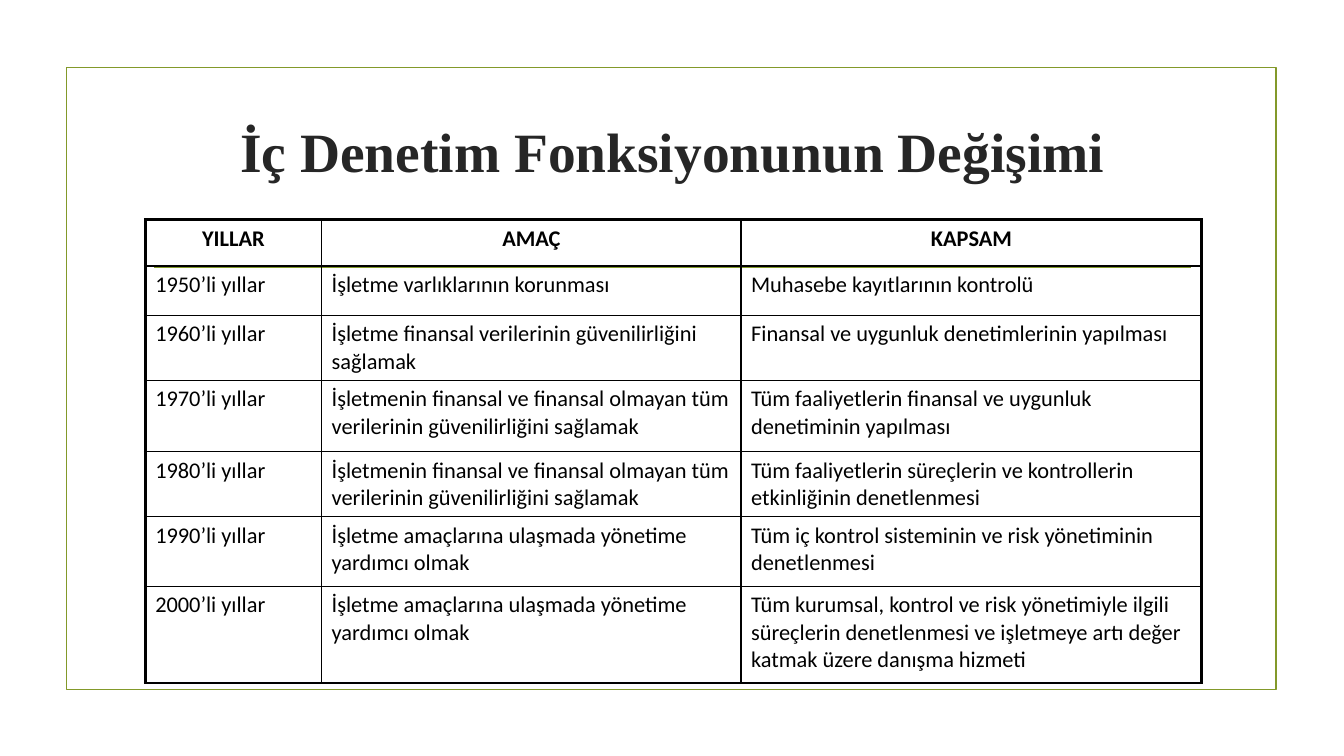
"""Build a slide with a table on how the internal audit function changed."""
import pptx
import pptx.dml.color
import pptx.enum.shapes
import pptx.enum.text
import pptx.oxml
import pptx.oxml.ns
import pptx.util
from pptx.util import Inches

TITLE = "İç Denetim Fonksiyonunun Değişimi"
ROWS = [
    ("YILLAR", "AMAÇ", "KAPSAM"),
    ("1950’li yıllar", "İşletme varlıklarının korunması",
     "Muhasebe kayıtlarının kontrolü"),
    ("1960’li yıllar", "İşletme finansal verilerinin güvenilirliğini sağlamak",
     "Finansal ve uygunluk denetimlerinin yapılması"),
    ("1970’li yıllar",
     "İşletmenin finansal ve finansal olmayan tüm verilerinin güvenilirliğini sağlamak",
     "Tüm faaliyetlerin finansal ve uygunluk denetiminin yapılması"),
    ("1980’li yıllar",
     "İşletmenin finansal ve finansal olmayan tüm verilerinin güvenilirliğini sağlamak",
     "Tüm faaliyetlerin süreçlerin ve kontrollerin etkinliğinin denetlenmesi"),
    ("1990’li yıllar", "İşletme amaçlarına ulaşmada yönetime yardımcı olmak",
     "Tüm iç kontrol sisteminin ve risk yönetiminin denetlenmesi"),
    ("2000’li yıllar", "İşletme amaçlarına ulaşmada yönetime yardımcı olmak",
     "Tüm kurumsal, kontrol ve risk yönetimiyle ilgili süreçlerin denetlenmesi "
     "ve işletmeye artı değer katmak üzere danışma hizmeti"),
]
COLUMN_WIDTHS = [1.75, 4.16, 4.57]
ROW_HEIGHTS = [0.46, 0.49, 0.63, 0.71, 0.55, 0.69, 0.96]
COLORS = {"accent": "83992A", "title": "262626", "table": "000000"}
OUTER_BORDER, INNER_BORDER = 2.25, 1


def rgb(name):
    return pptx.dml.color.RGBColor.from_string(COLORS[name])


def style_line(shape):
    shape.line.color.rgb = rgb("accent")
    shape.line.width = pptx.util.Pt(1.25)


def add_text(paragraph, text, size, font_name, color, bold):
    run = paragraph.add_run()
    run.text = text
    run.font.size = pptx.util.Pt(size)
    run.font.name = font_name
    run.font.color.rgb = rgb(color)
    run.font.bold = bold


def set_borders(cell, outer_sides):
    properties = cell._tc.get_or_add_tcPr()
    for index, (side, is_outer) in enumerate(outer_sides.items()):
        width = pptx.util.Pt(OUTER_BORDER if is_outer else INNER_BORDER)
        border = pptx.oxml.parse_xml(
            f'<a:{side} {pptx.oxml.ns.nsdecls("a")} w="{width}"><a:solidFill>'
            f'<a:srgbClr val="{COLORS["table"]}"/></a:solidFill></a:{side}>')
        properties.insert(index, border)


def add_frame(slide):
    frame = slide.shapes.add_shape(
        pptx.enum.shapes.MSO_SHAPE.RECTANGLE,
        Inches(0.66), Inches(0.67), Inches(12), Inches(6.17))
    frame.shadow.inherit = False
    frame.fill.background()
    style_line(frame)
    rule = slide.shapes.add_connector(
        pptx.enum.shapes.MSO_CONNECTOR.STRAIGHT,
        Inches(1.53), Inches(2.65), Inches(11.81), Inches(2.65))
    style_line(rule)
    rule._element.spPr.append(
        pptx.oxml.parse_xml(f'<a:effectLst {pptx.oxml.ns.nsdecls("a")}/>'))


def add_title(slide):
    title = slide.shapes.title
    title.left, title.top = Inches(1.42), Inches(1.07)
    title.width, title.height = Inches(10.5), Inches(1.43)
    text_frame = title.text_frame
    text_frame.word_wrap = True
    text_frame.vertical_anchor = pptx.enum.text.MSO_ANCHOR.MIDDLE
    text_frame.margin_bottom = Inches(0.63)
    paragraph = text_frame.paragraphs[0]
    paragraph.alignment = pptx.enum.text.PP_ALIGN.CENTER
    add_text(paragraph, TITLE, 39.6, "Times New Roman", "title", True)


def add_table(slide):
    table = slide.shapes.add_table(
        len(ROWS), len(COLUMN_WIDTHS), Inches(1.44), Inches(2.18),
        Inches(sum(COLUMN_WIDTHS)), Inches(sum(ROW_HEIGHTS))).table
    table.first_row = table.horz_banding = False
    for column, width in zip(table.columns, COLUMN_WIDTHS):
        column.width = Inches(width)
    for row, height in zip(table.rows, ROW_HEIGHTS):
        row.height = Inches(height)
    for row_index, texts in enumerate(ROWS):
        is_header = row_index == 0
        for column_index, text in enumerate(texts):
            cell = table.cell(row_index, column_index)
            cell.fill.background()
            set_borders(cell, {
                "lnL": column_index == 0,
                "lnR": column_index == len(COLUMN_WIDTHS) - 1,
                "lnT": is_header,
                "lnB": row_index == len(ROWS) - 1,
            })
            paragraph = cell.text_frame.paragraphs[0]
            if is_header:
                paragraph.alignment = pptx.enum.text.PP_ALIGN.CENTER
            add_text(paragraph, text, 16, "Calibri", "table", is_header)


def main():
    presentation = pptx.Presentation()
    presentation.slide_width = Inches(13.33)
    presentation.slide_height = Inches(7.5)
    slide = presentation.slides.add_slide(presentation.slide_layouts[5])
    add_frame(slide)
    add_title(slide)
    add_table(slide)
    presentation.save("out.pptx")


if __name__ == "__main__":
    main()
